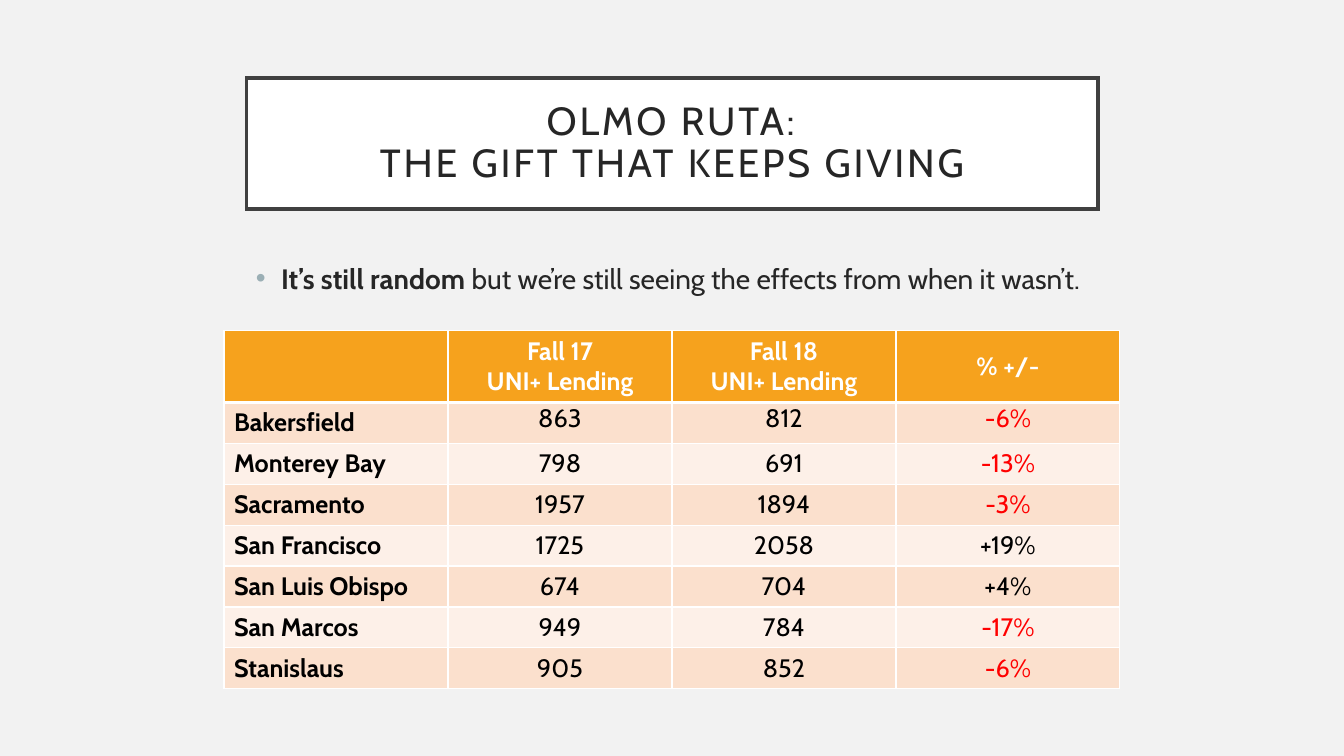
from lxml import etree
from pptx import Presentation
from pptx.dml.color import RGBColor
from pptx.enum.shapes import MSO_SHAPE
from pptx.enum.text import MSO_ANCHOR, PP_ALIGN
from pptx.oxml.ns import qn
from pptx.util import Pt

RECT = MSO_SHAPE.RECTANGLE
LEFT, CENTER = PP_ALIGN.LEFT, PP_ALIGN.CENTER
TOP, MIDDLE = MSO_ANCHOR.TOP, MSO_ANCHOR.MIDDLE

FONT = "Cabin"
COLORS = {
    "back": "F2F2F2", "white": "FFFFFF", "frame": "404040", "ink": "262626",
    "black": "000000", "loss": "FF0000", "bullet": "9BAFB5",
    "head": "F6A21D", "odd": "FBE0CD", "even": "FDF0E8",
}
HEADS = ["", "Fall 17\nUNI+ Lending", "Fall 18\nUNI+ Lending", "% +/-"]
ROWS = [
    ("Bakersfield", "863", "812", "-6%"),
    ("Monterey Bay", "798", "691", "-13%"),
    ("Sacramento", "1957", "1894", "-3%"),
    ("San Francisco", "1725", "2058", "+19%"),
    ("San Luis Obispo", "674", "704", "+4%"),
    ("San Marcos", "949", "784", "-17%"),
    ("Stanislaus", "905", "852", "-6%"),
]


def color(name):
    return RGBColor.from_string(COLORS[name])


def write(frame, text, size=18, ink="black", bold=False, align=LEFT, track=0, lead=None):
    """Fill a text frame: newline starts a paragraph, \\v breaks a line."""
    frame.text = text
    for para in frame.paragraphs:
        para.alignment = align
        if lead:
            para.line_spacing = lead
        for run in para.runs:
            font = run.font
            font.name, font.size, font.bold = FONT, Pt(size), bold
            font.color.rgb = color(ink)
            if track:
                font._element.set("spc", str(track * 100))


class Board:
    def __init__(self, deck):
        self.slide = deck.slides.add_slide(deck.slide_layouts[6])
        fill = self.slide.background.fill
        fill.solid()
        fill.fore_color.rgb = color("back")

    def title(self, text, *box):
        shape = self.slide.shapes.add_shape(RECT, *map(Pt, box))
        shape.shadow.inherit = False
        shape.fill.solid()
        shape.fill.fore_color.rgb = color("white")
        shape.line.color.rgb = color("frame")
        shape.line.width = Pt(2.5)
        line = shape._element.spPr.find(qn("a:ln"))
        etree.SubElement(line, qn("a:miter"), lim="800000")
        frame = shape.text_frame
        frame.word_wrap = True
        frame.vertical_anchor = MIDDLE
        frame.margin_left = frame.margin_right = Pt(14.4)
        frame.margin_top = frame.margin_bottom = Pt(14.4)
        write(frame, text, size=28, ink="ink", align=CENTER, track=2, lead=0.9)

    def bullet(self, lead, rest, *box):
        frame = self.slide.shapes.add_textbox(*map(Pt, box)).text_frame
        frame.word_wrap = True
        write(frame, lead, size=20, ink="ink", bold=True)
        para = frame.paragraphs[0]
        para.space_before = Pt(10)
        run = para.add_run()
        run.text = rest
        run.font.name, run.font.size, run.font.bold = FONT, Pt(20), False
        run.font.color.rgb = color("ink")
        props = para._p.get_or_add_pPr()
        props.set("marL", str(Pt(18)))
        props.set("indent", str(-Pt(18)))
        tint = etree.SubElement(props, qn("a:buClr"))
        etree.SubElement(tint, qn("a:srgbClr"), val=COLORS["bullet"])
        etree.SubElement(props, qn("a:buFont"), typeface="Arial")
        etree.SubElement(props, qn("a:buChar"), char="•")

    def edges(self, cell, top, base):
        props = cell._tc.get_or_add_tcPr()
        for side, width in (("L", 1), ("R", 1), ("T", top), ("B", base)):
            line = etree.SubElement(props, qn("a:ln" + side), w=str(Pt(width)))
            fill = etree.SubElement(line, qn("a:solidFill"))
            etree.SubElement(fill, qn("a:srgbClr"), val=COLORS["white"])

    def cell(self, cell, text, fill, top=1, base=1, anchor=TOP, **style):
        self.edges(cell, top, base)
        cell.fill.solid()
        cell.fill.fore_color.rgb = color(fill)
        cell.vertical_anchor = anchor
        write(cell.text_frame, text, **style)

    def table(self, heads, rows, left, top, width, head, step):
        high = head + step * len(rows)
        box = map(Pt, (left, top, width, high))
        grid = self.slide.shapes.add_table(len(rows) + 1, len(heads), *box).table
        for col in grid.columns:
            col.width = Pt(width / len(heads))
        for i, row in enumerate(grid.rows):
            row.height = Pt(step if i else head)

        # Header row
        for c, text in enumerate(heads):
            anchor = MIDDLE if c == len(heads) - 1 else TOP
            self.cell(grid.cell(0, c), text, "head", base=3, anchor=anchor,
                      ink="white", bold=True, align=CENTER)

        # Campus rows
        for r, row in enumerate(rows, 1):
            for c, text in enumerate(row):
                cell = grid.cell(r, c)
                self.cell(cell, text, "odd" if r % 2 else "even",
                          top=3 if r == 1 else 1,
                          ink="loss" if text.startswith("-") else "black",
                          bold=c == 0, align=CENTER if c else LEFT)
                if r == 1 and c:
                    cell.margin_left = cell.margin_right = cell.margin_top = Pt(0.72)
                    cell.margin_bottom = 0


def main():
    deck = Presentation()
    deck.slide_width, deck.slide_height = Pt(960), Pt(540)
    board = Board(deck)
    board.title("OLMO RUTA:\vTHE GIFT THAT KEEPS GIVING", 176, 55.8, 608.4, 93.6)
    board.bullet("It’s still random ",
                 "but we’re still seeing the effects from when it wasn’t.",
                 175.7, 183.3, 608.4, 41)
    board.table(HEADS, ROWS, 160, 236.2, 640, 51.2, 29.23)
    deck.save("out.pptx")


if __name__ == "__main__":
    main()
